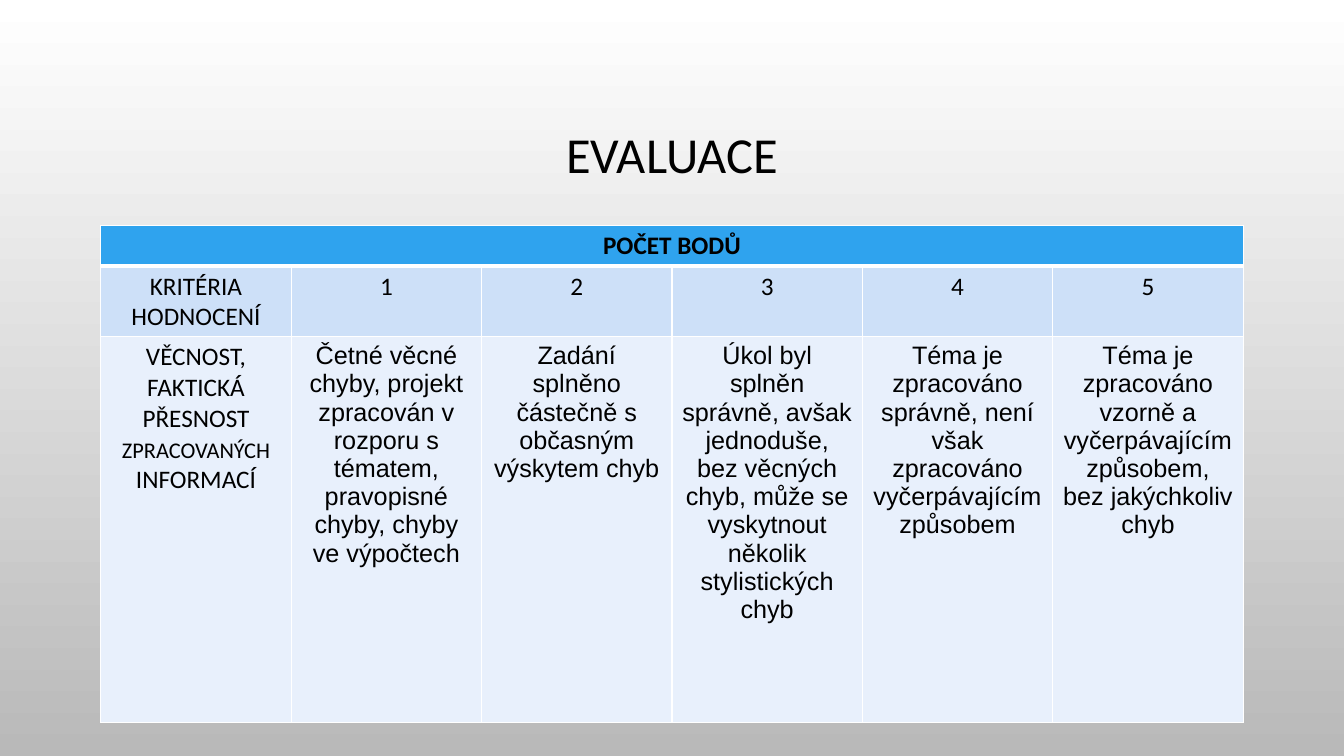
from typing import NamedTuple

from lxml.etree import SubElement
from pptx import Presentation
from pptx.dml.color import RGBColor
from pptx.enum.text import MSO_ANCHOR, PP_ALIGN
from pptx.oxml.ns import qn
from pptx.slide import Slide
from pptx.table import Table, _Cell
from pptx.text.text import _Paragraph
from pptx.util import Inches, Pt

BLACK = RGBColor(0x00, 0x00, 0x00)
WHITE = RGBColor(0xFF, 0xFF, 0xFF)
GREY = RGBColor(0xB9, 0xB9, 0xB9)
HEADER_BLUE = RGBColor(0x2F, 0xA3, 0xEE)
SCALE_BLUE = RGBColor(0xCD, 0xE0, 0xF8)
PALE_BLUE = RGBColor(0xE8, 0xF0, 0xFC)

ROW_HEIGHTS = (0.39, 0.67, 3.83)
COLUMN_COUNT = 6
TABLE_WIDTH = 11.33


class TextRun(NamedTuple):
    text: str
    font: str = "Calibri"
    size: int = 18
    bold: bool = False


class TableRow(NamedTuple):
    fill: RGBColor
    cells: list[list[TextRun]]
    bottom_border: int = 1


DESCRIPTIONS = (
    "Četné věcné chyby, projekt zpracován v rozporu s tématem, pravopisné chyby, chyby ve výpočtech",
    "Zadání splněno částečně s občasným výskytem chyb",
    "Úkol byl splněn správně, avšak jednoduše, bez věcných chyb, může se vyskytnout "
    "několik stylistických chyb",
    "Téma je zpracováno správně, není však zpracováno vyčerpávajícím způsobem",
    "Téma je zpracováno vzorně a vyčerpávajícím způsobem, bez jakýchkoliv chyb",
)
CRITERION = [
    TextRun("VĚCNOST, FAKTICKÁ PŘESNOST "),
    TextRun("ZPRACOVANÝCH", size=16),
    TextRun(" INFORMACÍ"),
]
ROWS = (
    TableRow(HEADER_BLUE, [[TextRun("POČET BODŮ", bold=True)]], bottom_border=3),
    TableRow(SCALE_BLUE, [[TextRun(text)] for text in ("KRITÉRIA HODNOCENÍ", *"12345")]),
    TableRow(PALE_BLUE, [CRITERION, *([TextRun(text, "Arial")] for text in DESCRIPTIONS)]),
)


def write_runs(paragraph: _Paragraph, runs: list[TextRun]) -> None:
    paragraph.alignment = PP_ALIGN.CENTER
    for text_run in runs:
        run = paragraph.add_run()
        run.text = text_run.text
        run.font.name = text_run.font
        run.font.size = Pt(text_run.size)
        run.font.bold = text_run.bold
        run.font.color.rgb = BLACK


def set_borders(cell: _Cell, top: int, bottom: int) -> None:
    """Draw white borders; the side borders are one point wide."""
    properties = cell._tc.get_or_add_tcPr()
    for side, width in (("L", 1), ("R", 1), ("T", top), ("B", bottom)):
        line = SubElement(properties, qn(f"a:ln{side}"), w=str(Pt(width)))
        SubElement(SubElement(line, qn("a:solidFill")), qn("a:srgbClr"), val=str(WHITE))


def fill_table(table: Table) -> None:
    top_border = 1
    for row_index, row in enumerate(ROWS):
        table.rows[row_index].height = Inches(ROW_HEIGHTS[row_index])
        for cell in table.rows[row_index].cells:
            set_borders(cell, top_border, row.bottom_border)
            cell.fill.solid()
            cell.fill.fore_color.rgb = row.fill
        for column_index, runs in enumerate(row.cells):
            write_runs(table.cell(row_index, column_index).text_frame.paragraphs[0], runs)
        top_border = row.bottom_border
    table.cell(0, 0).merge(table.cell(0, COLUMN_COUNT - 1))


def set_background(slide: Slide) -> None:
    fill = slide.background.fill
    fill.gradient()
    fill.gradient_angle = 270
    for stop, color, position in zip(fill.gradient_stops, (WHITE, GREY), (0, 1)):
        stop.color.rgb = color
        stop.position = position


def add_title(slide: Slide) -> None:
    box = slide.shapes.add_textbox(Inches(1), Inches(0.68), Inches(TABLE_WIDTH), Inches(1.75))
    box.text_frame.word_wrap = True
    box.text_frame.vertical_anchor = MSO_ANCHOR.MIDDLE
    paragraph = box.text_frame.paragraphs[0]
    paragraph.line_spacing = 0.9
    write_runs(paragraph, [TextRun("EVALUACE", size=36)])


def main() -> None:
    presentation = Presentation()
    presentation.slide_width = Inches(13.33)
    presentation.slide_height = Inches(7.5)
    slide = presentation.slides.add_slide(presentation.slide_layouts[6])
    set_background(slide)
    add_title(slide)
    frame = slide.shapes.add_table(
        len(ROWS), COLUMN_COUNT, Inches(1), Inches(2.24),
        Inches(TABLE_WIDTH), Inches(sum(ROW_HEIGHTS)),
    )
    fill_table(frame.table)
    presentation.save("out.pptx")


if __name__ == "__main__":
    main()
